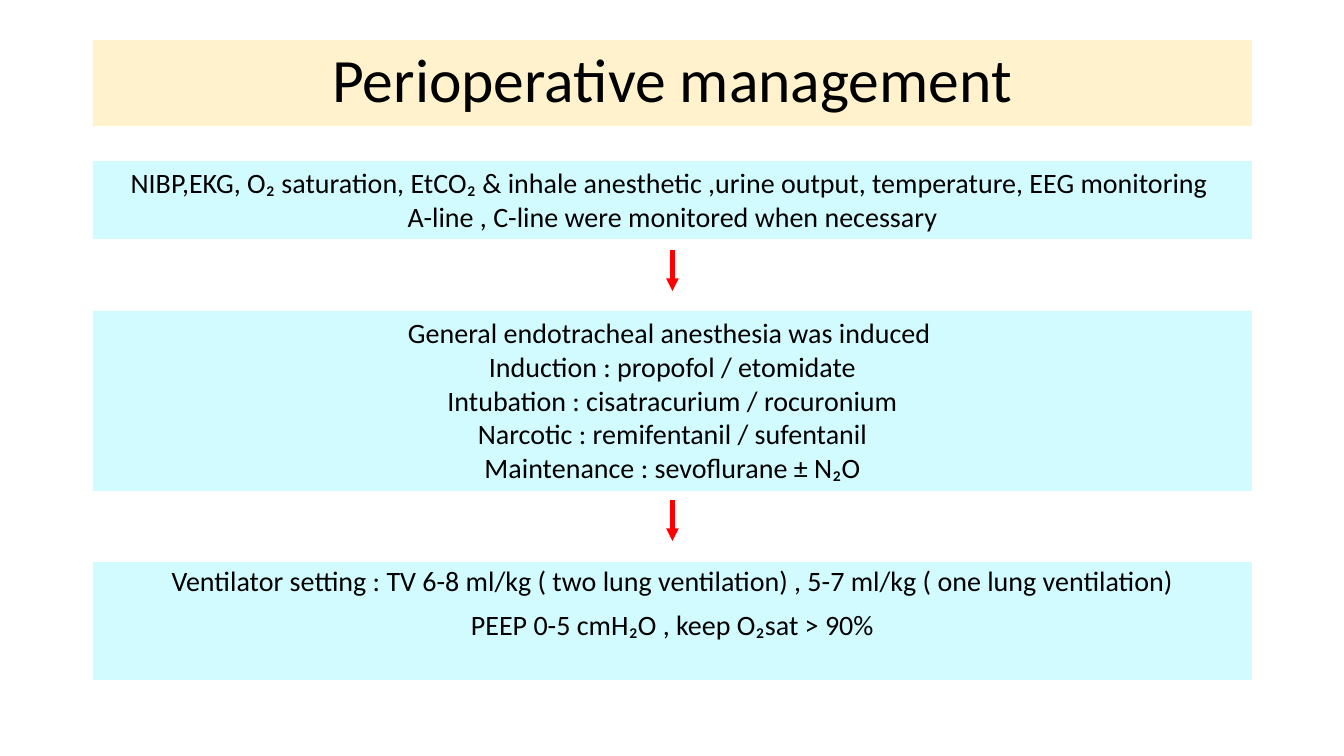
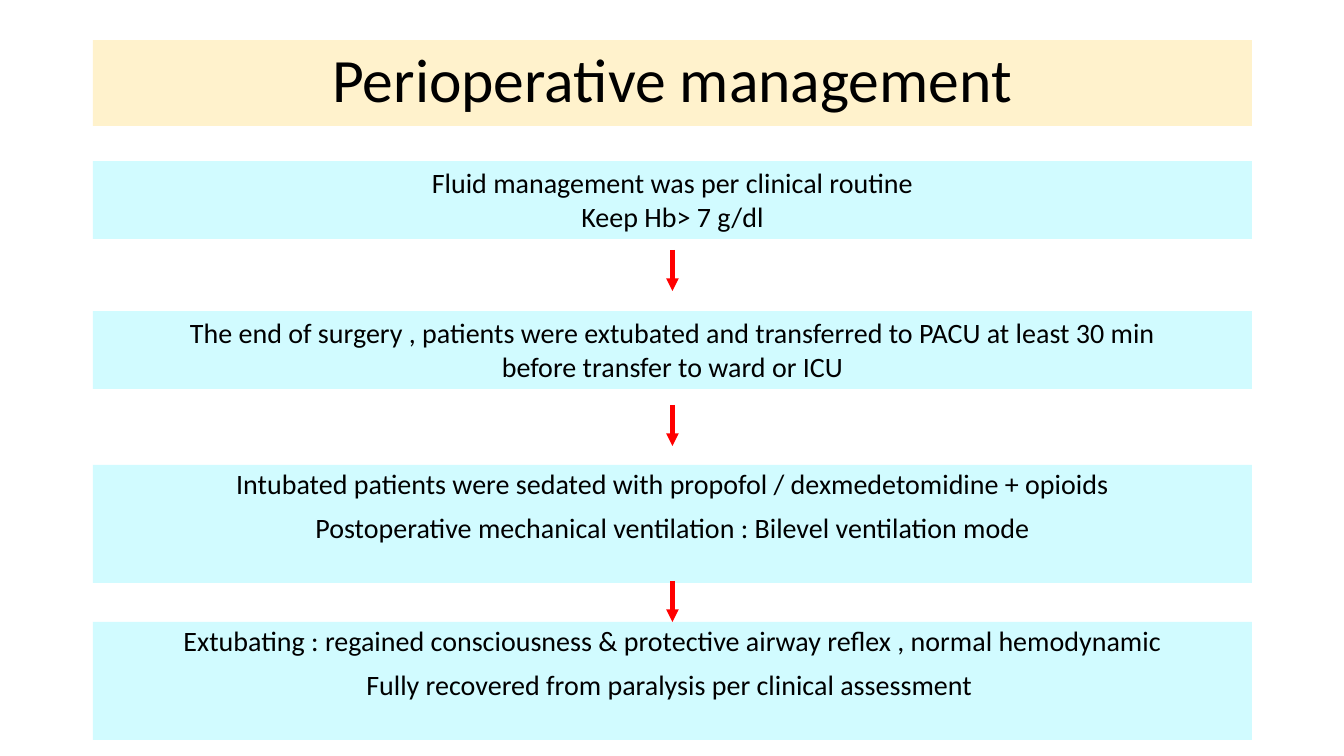
from dataclasses import dataclass

from lxml.etree import SubElement
from pptx import Presentation
from pptx.dml.color import RGBColor
from pptx.enum.shapes import MSO_CONNECTOR
from pptx.enum.text import MSO_ANCHOR, PP_ALIGN
from pptx.oxml.ns import qn
from pptx.util import Pt

EMU_PER_PX = 914400 / 100.8
COLORS = {
    "title_band": "FFF2CC",
    "step": "D1FBFF",
    "arrow": "FF0000",
    "text": "000000",
}
FONT = "Calibri"
SLIDE_WIDTH, SLIDE_HEIGHT = 1344, 756
BAND_LEFT, BAND_WIDTH = 93, 1159
TITLE_TOP, TITLE_HEIGHT = 40, 86
LINE_HEIGHT, STEP_PADDING = 34, 10
SPACED_HEIGHT = 118
ARROW_LENGTH = 41


@dataclass
class Step:
    top: int
    lines: list
    spaced: bool = False

    @property
    def height(self):
        if self.spaced:
            return SPACED_HEIGHT
        return STEP_PADDING + LINE_HEIGHT * len(self.lines)


FLOWS = [
    {
        "title": "Perioperative management",
        "steps": [
            Step(161, [
                "NIBP,EKG, O₂ saturation, EtCO₂ & inhale anesthetic ,urine output, temperature, EEG monitoring ",
                "A-line , C-line were monitored when necessary",
            ]),
            Step(311, [
                "General endotracheal anesthesia was induced ",
                "Induction : propofol / etomidate",
                "Intubation : cisatracurium / rocuronium",
                "Narcotic : remifentanil / sufentanil",
                "Maintenance : sevoflurane ± N₂O",
            ]),
            Step(562, [
                "Ventilator setting : TV 6-8 ml/kg ( two lung ventilation) , 5-7 ml/kg ( one lung ventilation)",
                "PEEP 0-5 cmH₂O , keep O₂sat > 90%",
            ], spaced=True),
        ],
        "arrow_tops": [250, 500],
    },
    {
        "title": "Perioperative management",
        "steps": [
            Step(161, [
                "Fluid management was per clinical routine",
                "Keep Hb> 7 g/dl",
            ]),
            Step(311, [
                "The end of surgery , patients were extubated and transferred to PACU at least 30 min",
                "before transfer to ward or ICU",
            ]),
            Step(465, [
                "Intubated patients were sedated with propofol / dexmedetomidine + opioids",
                "Postoperative mechanical ventilation : Bilevel ventilation mode",
            ], spaced=True),
            Step(622, [
                "Extubating : regained consciousness & protective airway reflex , normal hemodynamic",
                "Fully recovered from paralysis per clinical assessment ",
            ], spaced=True),
        ],
        "arrow_tops": [250, 405, 581],
    },
]


def px(length):
    return round(length * EMU_PER_PX)


def color(name):
    return RGBColor.from_string(COLORS[name])


def add_band(slide, top, height, fill, lines, size,
             anchor=MSO_ANCHOR.TOP, line_spacing=None, space_before=0):
    """Add a full-width filled band with centred lines of text."""
    band = slide.shapes.add_textbox(
        px(BAND_LEFT), px(top), px(BAND_WIDTH), px(height))
    band.fill.solid()
    band.fill.fore_color.rgb = color(fill)
    frame = band.text_frame
    frame.word_wrap = True
    frame.vertical_anchor = anchor
    for index, line in enumerate(lines):
        paragraph = frame.add_paragraph() if index else frame.paragraphs[0]
        paragraph.alignment = PP_ALIGN.CENTER
        paragraph.line_spacing = line_spacing
        paragraph.space_before = Pt(space_before)
        run = paragraph.add_run()
        run.text = line
        run.font.name = FONT
        run.font.size = Pt(size)
        run.font.color.rgb = color("text")


def add_title(slide, title):
    add_band(slide, TITLE_TOP, TITLE_HEIGHT, "title_band", [title], 44,
             anchor=MSO_ANCHOR.MIDDLE, line_spacing=0.9)


def add_step(slide, step):
    spacing = {"line_spacing": 0.9, "space_before": 10} if step.spaced else {}
    add_band(slide, step.top, step.height, "step", step.lines, 20, **spacing)


def add_down_arrow(slide, top):
    center = px(BAND_LEFT + BAND_WIDTH / 2)
    arrow = slide.shapes.add_connector(
        MSO_CONNECTOR.STRAIGHT, center, px(top), center, px(top + ARROW_LENGTH))
    arrow.line.color.rgb = color("arrow")
    arrow.line.width = Pt(3)
    SubElement(arrow.line._get_or_add_ln(), qn("a:tailEnd"), type="triangle")
    SubElement(arrow._element.spPr, qn("a:effectLst"))


def add_flow_slide(deck, flow):
    slide = deck.slides.add_slide(deck.slide_layouts[6])
    add_title(slide, flow["title"])
    for step in flow["steps"]:
        add_step(slide, step)
    for top in flow["arrow_tops"]:
        add_down_arrow(slide, top)


def main():
    deck = Presentation()
    deck.slide_width = px(SLIDE_WIDTH)
    deck.slide_height = px(SLIDE_HEIGHT)
    for flow in FLOWS:
        add_flow_slide(deck, flow)
    deck.save("out.pptx")


if __name__ == "__main__":
    main()
